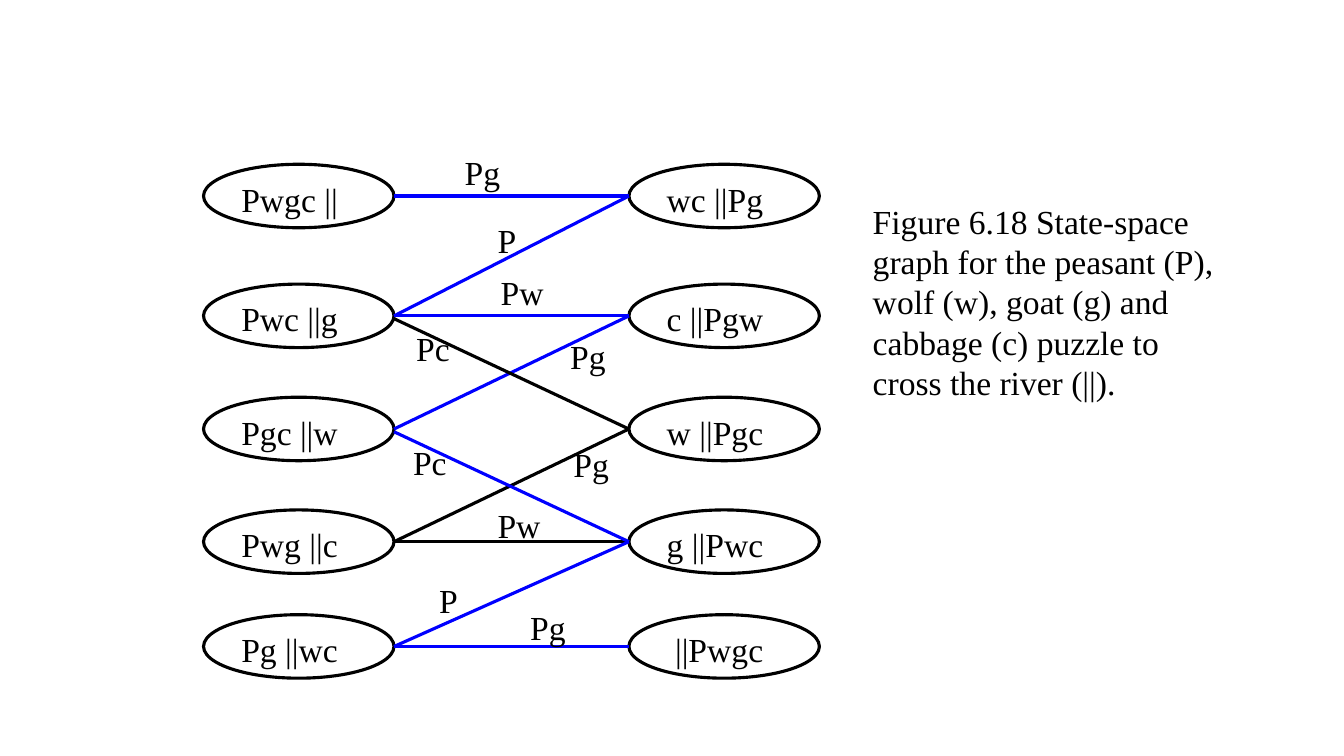
from dataclasses import dataclass

from lxml.etree import SubElement
from pptx import Presentation
from pptx.dml.color import RGBColor as Rgb
from pptx.enum.shapes import MSO_CONNECTOR as Link, MSO_SHAPE as Kind
from pptx.enum.text import MSO_ANCHOR as Anchor, MSO_AUTO_SIZE as Fit, PP_ALIGN as Align
from pptx.oxml.ns import qn
from pptx.util import Cm, Pt


@dataclass(frozen=True)
class Theme:
    ink: Rgb = Rgb(0, 0, 0)
    path_ink: Rgb = Rgb(0, 0, 255)
    paper: Rgb = Rgb(255, 255, 255)
    font: str = "Times New Roman"
    size: Pt = Pt(24)
    rule: Pt = Pt(2.25)


THEME = Theme()

# Graph data: lengths in cm, relative to the graph's box
NODE_W, NODE_H = 4.8, 1.6
ROWS = [0, 3.02, 5.87, 8.71, 11.35]
DROP = 0.07  # falling edges leave just below the node's middle
LEFT = ["Pwgc ||", "Pwc ||g", "Pgc ||w", "Pwg ||c", "Pg ||wc"]
RIGHT = ["wc ||Pg", "c ||Pgw", "w ||Pgc", "g ||Pwc", " ||Pwgc"]

# Left row, right row, on the solution path, label, label x, label y
EDGES = [
    (0, 0, True, "Pg", 6.33, -0.43),
    (1, 1, True, "Pw", 7.24, 2.59),
    (3, 3, False, "Pw", 7.16, 8.46),
    (4, 4, True, "Pg", 7.98, 11.02),
    (1, 0, True, "P", 7.16, 1.27),
    (2, 1, True, "Pg", 8.99, 4.19),
    (3, 2, False, "Pg", 9.07, 6.93),
    (4, 3, True, "P", 5.69, 10.36),
    (1, 2, False, "Pc", 5.11, 4.01),
    (2, 3, True, "Pc", 5.03, 6.88),
]
CAPTION = ("Figure 6.18 State-space graph for the peasant (P), wolf (w), "
           "goat (g) and cabbage (c) puzzle to cross the river (||).")


def write(shape, text):
    frame = shape.text_frame
    frame.text = text
    frame.word_wrap = True
    frame.vertical_anchor = Anchor.TOP
    para = frame.paragraphs[0]
    para.alignment = Align.LEFT
    for run in para.runs:
        run.font.name = THEME.font
        run.font.size = THEME.size
        run.font.color.rgb = THEME.ink
    return frame


def add_node(slide, text, x, y):
    node = slide.shapes.add_shape(Kind.OVAL, Cm(x), Cm(y), Cm(NODE_W), Cm(NODE_H))
    node.shadow.inherit = False
    node.fill.solid()
    node.fill.fore_color.rgb = THEME.paper
    node.line.color.rgb = THEME.ink
    node.line.width = THEME.rule
    write(node, text).paragraphs[0].space_after = Pt(8)


def add_edge(slide, start, end, solved):
    points = [Cm(n) for n in (*start, *end)]
    edge = slide.shapes.add_connector(Link.STRAIGHT, *points)
    edge.line.color.rgb = THEME.path_ink if solved else THEME.ink
    edge.line.width = THEME.rule
    SubElement(edge._element.spPr, qn("a:effectLst"))


def add_label(slide, text, x, y):
    label = slide.shapes.add_textbox(Cm(x), Cm(y), Cm(1.83), Cm(1.27))
    write(label, text).auto_size = Fit.SHAPE_TO_FIT_TEXT


def add_graph(slide, x, y, width):
    right = x + width - NODE_W
    # States on each bank
    for col, names in ((x, LEFT), (right, RIGHT)):
        for name, row in zip(names, ROWS):
            add_node(slide, name, col, y + row)
    # Crossings between states
    mids = [y + row + NODE_H / 2 for row in ROWS]
    for a, b, solved, *_ in EDGES:
        drop = DROP if b > a else 0
        add_edge(slide, (x + NODE_W, mids[a] + drop), (right, mids[b]), solved)
    # Passengers on each crossing
    for *_, text, dx, dy in EDGES:
        add_label(slide, text, x + dx, y + dy)


def add_caption(slide, x, y, width, height):
    title = slide.shapes.title
    title.left, title.top, title.width, title.height = (
        Cm(n) for n in (x, y, width, height))
    write(title, CAPTION).auto_size = Fit.SHAPE_TO_FIT_TEXT


def main():
    deck = Presentation()
    deck.slide_width, deck.slide_height = Cm(33.87), Cm(19.05)
    slide = deck.slides.add_slide(deck.slide_layouts[5])
    add_graph(slide, 5.13, 4.14, 15.52)
    add_caption(slide, 21.74, 4.93, 9.5, 5.38)
    deck.save("out.pptx")


if __name__ == "__main__":
    main()
